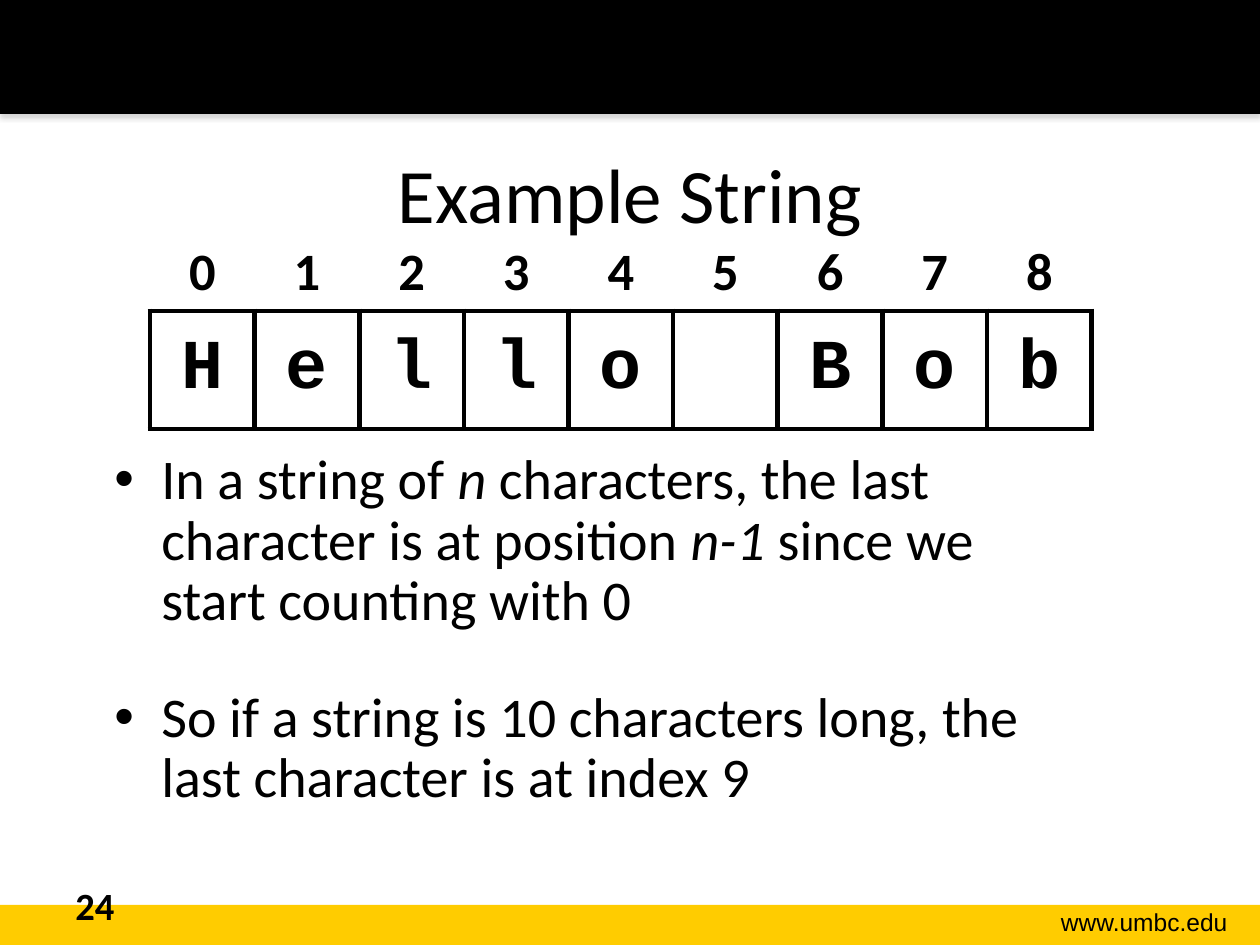
import dataclasses

import lxml.etree
import pptx
import pptx.dml.color
import pptx.enum.shapes
import pptx.enum.text
import pptx.oxml
import pptx.oxml.ns
import pptx.util

PX_PER_INCH = 126
ALIGN = pptx.enum.text.PP_ALIGN
ANCHOR = pptx.enum.text.MSO_ANCHOR


@dataclasses.dataclass(frozen=True)
class Theme:
    ink: str = "000000"
    paper: str = "FFFFFF"
    gold: str = "FFCC00"
    shadow: str = "808080"
    body_font: str = "Calibri"
    code_font: str = "Courier New"
    footer_font: str = "Arial"
    title_size: int = 44
    character_size: int = 40
    bullet_size: int = 32
    index_size: int = 30
    number_size: int = 22
    footer_size: int = 14
    border: int = 3


def px(length):
    return pptx.util.Emu(round(length * 914400 / PX_PER_INCH))


def rgb(value):
    return pptx.dml.color.RGBColor.from_string(value)


def add_xml(parent, tag, **attributes):
    child = lxml.etree.SubElement(parent, pptx.oxml.ns.qn(tag))
    for key, value in attributes.items():
        child.set(key, str(value))
    return child


class SlideBuilder:
    def __init__(self, slide, theme):
        self.slide = slide
        self.theme = theme

    def style(self, paragraph, size, font=None, bold=False, align=None):
        paragraph.alignment = align
        for run in paragraph.runs:
            run.font.size = pptx.util.Pt(size)
            run.font.name = font or self.theme.body_font
            run.font.bold = bold
            run.font.color.rgb = rgb(self.theme.ink)

    def title(self, text, box):
        heading = self.slide.shapes.title
        heading.left, heading.top, heading.width, heading.height = map(px, box)
        heading.text_frame.text = text
        heading.text_frame.vertical_anchor = ANCHOR.MIDDLE
        self.style(heading.text_frame.paragraphs[0], self.theme.title_size, align=ALIGN.CENTER)

    def band(self, box, color, shadow=False):
        band = self.slide.shapes.add_shape(
            pptx.enum.shapes.MSO_SHAPE.RECTANGLE, *map(px, box))
        band.fill.solid()
        band.fill.fore_color.rgb = rgb(color)
        band.line.fill.background()
        band.shadow.inherit = False
        if shadow:
            effects = band._element.spPr.find(pptx.oxml.ns.qn("a:effectLst"))
            outer = add_xml(effects, "a:outerShdw", blurRad=pptx.util.Pt(3.1),
                            dist=pptx.util.Pt(1.8), dir=5400000, rotWithShape=0)
            tone = add_xml(outer, "a:srgbClr", val=self.theme.shadow)
            add_xml(tone, "a:alpha", val=35000)

    def text_frame(self, box):
        frame = self.slide.shapes.add_textbox(*map(px, box)).text_frame
        frame.word_wrap = True
        return frame

    def label(self, text, box, size, **style):
        frame = self.text_frame(box)
        frame.text = text
        self.style(frame.paragraphs[0], size, **style)

    def bullets(self, items, box, gap):
        frame = self.text_frame(box)
        for position, pieces in enumerate(items):
            paragraph = frame.add_paragraph() if position else frame.paragraphs[0]
            properties = paragraph._p.get_or_add_pPr()
            properties.set("marL", str(px(47)))
            properties.set("indent", str(-px(47)))
            add_xml(properties, "a:buFont", typeface="Arial")
            add_xml(properties, "a:buChar", char="•")
            paragraph.line_spacing = 0.9
            paragraph.space_before = pptx.util.Pt(gap if position else 0)
            for text, italic in pieces:
                for number, line in enumerate(text.split("\n")):
                    if number:
                        paragraph.add_line_break()
                    run = paragraph.add_run()
                    run.text = line
                    run.font.italic = italic
            self.style(paragraph, self.theme.bullet_size)

    def borders(self, cell, drawn_sides):
        properties = cell._tc.get_or_add_tcPr()
        for side in "LRTB":
            if side in drawn_sides:
                line = add_xml(properties, f"a:ln{side}", w=pptx.util.Pt(self.theme.border))
                add_xml(add_xml(line, "a:solidFill"), "a:srgbClr", val=self.theme.ink)
            else:
                add_xml(add_xml(properties, f"a:ln{side}", w=0), "a:noFill")

    def cell(self, cell, text, size, font, anchor, drawn_sides):
        cell.text = text
        cell.vertical_anchor = anchor
        self.style(cell.text_frame.paragraphs[0], size, font, True, ALIGN.CENTER)
        self.borders(cell, drawn_sides)

    def indexed_string(self, text, box, row_heights):
        theme = self.theme
        table = self.slide.shapes.add_table(2, len(text), *map(px, box)).table
        table.first_row = table.horz_banding = False
        for row, height in zip(table.rows, row_heights):
            row.height = px(height)
        for index, character in enumerate(text):
            header, body = table.cell(0, index), table.cell(1, index)
            self.cell(header, str(index), theme.index_size, theme.body_font,
                      ANCHOR.BOTTOM, "B")
            header.fill.background()
            self.cell(body, character.strip(), theme.character_size, theme.code_font,
                      ANCHOR.MIDDLE, "LRTB")
            body.fill.solid()
            body.fill.fore_color.rgb = rgb(theme.paper)


def main():
    theme = Theme()
    deck = pptx.Presentation()
    deck.slide_width, deck.slide_height = px(1260), px(945)
    builder = SlideBuilder(deck.slides.add_slide(deck.slide_layouts[5]), theme)

    builder.band((0, 905, 1260, 40), theme.gold)
    builder.band((0, 0, 1260, 114), theme.ink, shadow=True)
    builder.label("www.umbc.edu", (989, 901, 251, 42), theme.footer_size,
                  font=theme.footer_font, align=ALIGN.RIGHT)
    builder.title("Example String", (63, 114, 1134, 157))
    builder.label("24", (63, 876, 294, 50), theme.number_size, bold=True)
    builder.indexed_string("Hello Bob", (150, 229, 942, 200), (82, 118))
    builder.bullets([
        [("In a string of ", False), ("n", True),
         (" characters, the last \ncharacter is at position ", False), ("n-1", True),
         (" since we \nstart counting with 0", False)],
        [("So if a string is 10 characters long, the \nlast character is at index 9", False)],
    ], (102, 445, 1071, 383), gap=32)
    deck.save("out.pptx")


if __name__ == "__main__":
    main()
